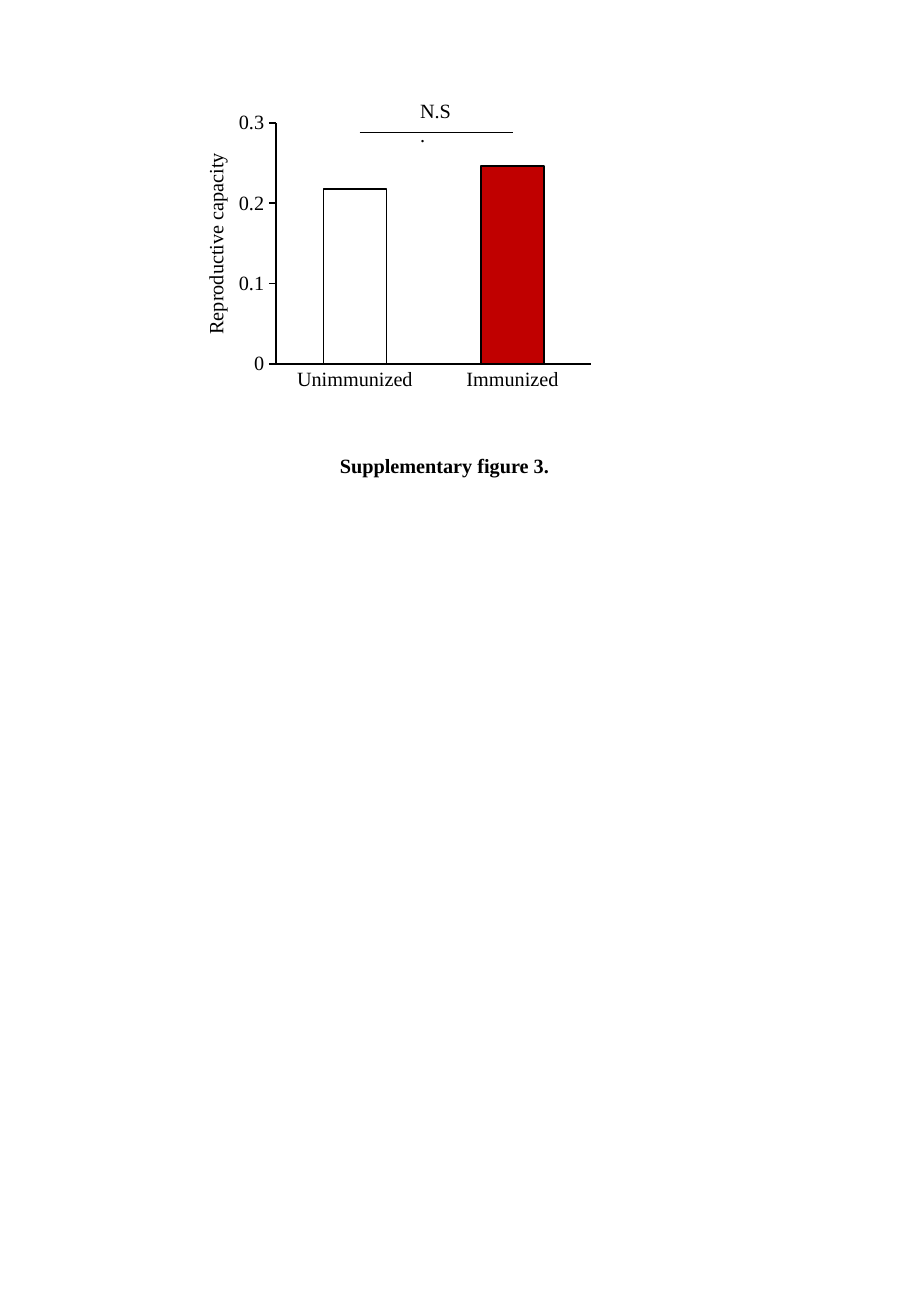
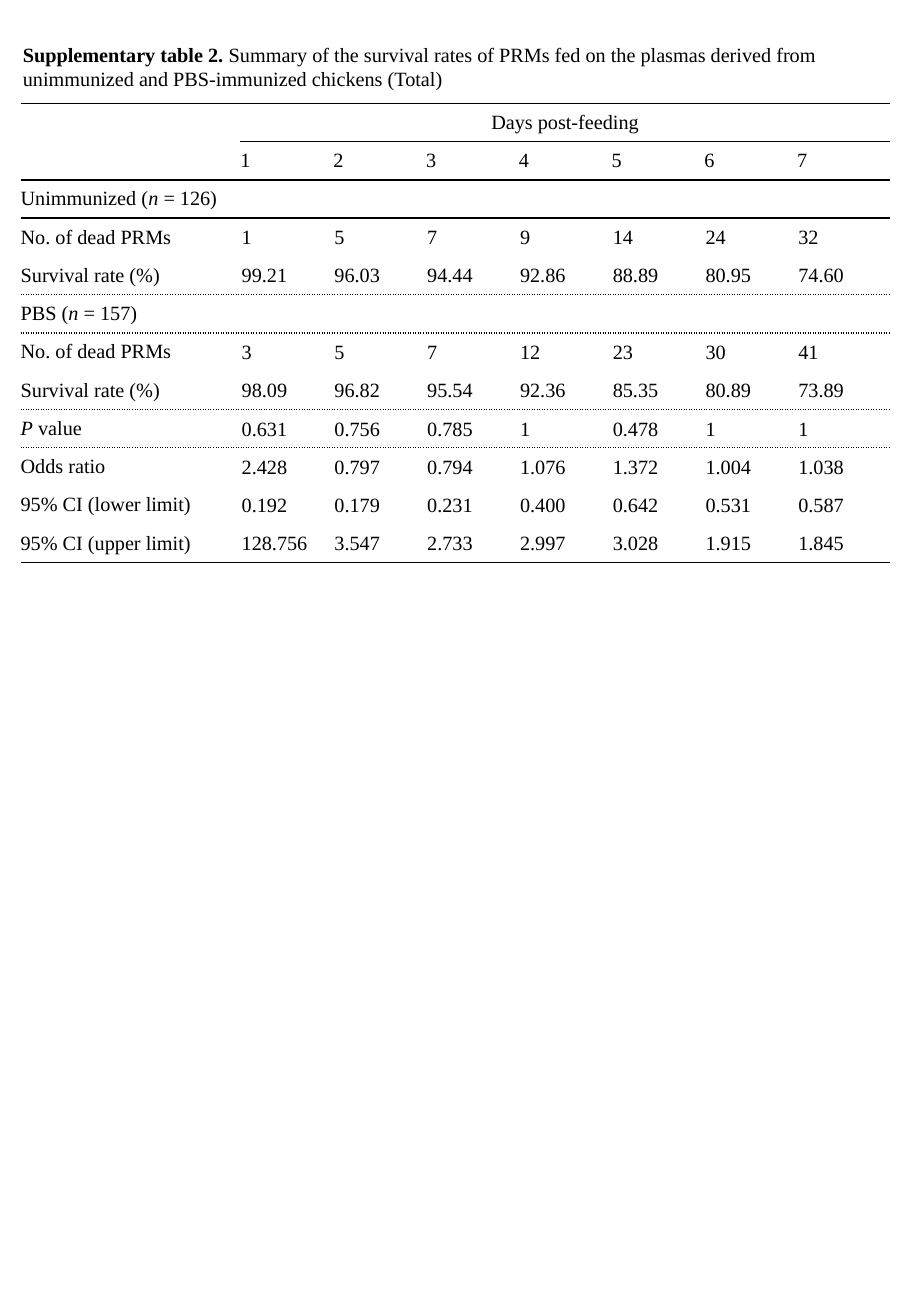
from dataclasses import dataclass

from lxml.etree import SubElement
from pptx import Presentation
from pptx.chart.data import CategoryChartData
from pptx.dml.color import RGBColor
from pptx.enum.chart import XL_CHART_TYPE, XL_TICK_MARK
from pptx.enum.shapes import MSO_CONNECTOR
from pptx.enum.text import MSO_ANCHOR, MSO_AUTO_SIZE, PP_ALIGN
from pptx.oxml import parse_xml
from pptx.oxml.ns import nsdecls, qn
from pptx.util import Inches, Pt


@dataclass(frozen=True)
class Theme:
    font: str = "Times New Roman"
    ink: RGBColor = RGBColor(0, 0, 0)
    paper: RGBColor = RGBColor(255, 255, 255)
    accent: RGBColor = RGBColor(0xC0, 0, 0)
    text_size: float = 12
    chart_size: float = 10.5
    line_width: float = 1


THEME = Theme()
PAGE_COLUMNS, PAGE_ROWS = 75, 108.3
NO_STYLE = "{2D5ABB26-0587-4C30-8999-92F81FD0307C}"

COUNT_LABEL, RATE_LABEL = "No. of dead PRMs", "Survival rate (%)"
TABLE_ROWS = [
    ["", "Days post-feeding"],
    ["", "1", "2", "3", "4", "5", "6", "7"],
    [[("Unimmunized (", {}), ("n ", {"italic": True}), ("= 126)", {})]],
    [COUNT_LABEL, "1", "5", "7", "9", "14", "24", "32"],
    [RATE_LABEL, "99.21", "96.03", "94.44", "92.86", "88.89", "80.95", "74.60"],
    [[("PBS (", {}), ("n ", {"italic": True}), ("= 157)", {})]],
    [COUNT_LABEL, "3", "5", "7", "12", "23", "30", "41"],
    [RATE_LABEL, "98.09", "96.82", "95.54", "92.36", "85.35", "80.89", "73.89"],
    [[("P", {"italic": True}), (" value", {})],
     "0.631", "0.756", "0.785", "1", "0.478", "1", "1"],
    ["Odds ratio", "2.428", "0.797", "0.794", "1.076", "1.372", "1.004", "1.038"],
    ["95% CI (lower limit)",
     "0.192", "0.179", "0.231", "0.400", "0.642", "0.531", "0.587"],
    ["95% CI (upper limit)",
     "128.756", "3.547", "2.733", "2.997", "3.028", "1.915", "1.845"],
]
HEADER_ROWS = 2
RULES = {0: ("solid", 0), 1: ("solid", 1), 2: ("solid", 0),
         5: ("dot", 0), 8: ("dot", 0), 12: ("solid", 0)}
SPANS = [((0, 1), (0, 7)), ((2, 0), (2, 1)), ((5, 0), (5, 1))]


def grid(*cells):
    return [Inches(cell / 10) for cell in cells]


def set_values(target, values):
    for name, value in values.items():
        setattr(target, name, value)


def style_font(font, **changes):
    set_values(font, {"name": THEME.font, "size": Pt(THEME.text_size),
                      "bold": False, **changes})
    font.color.rgb = THEME.ink


def style_line(line):
    line.color.rgb = THEME.ink
    line.width = Pt(THEME.line_width)


def write_spans(para, content):
    spans = [(content, {})] if isinstance(content, str) else content
    for text, changes in spans:
        if text:
            span = para.add_run()
            span.text = text
            style_font(span.font, **changes)


def add_text(page, place, content):
    box = page.shapes.add_textbox(*grid(*place))
    set_values(box.text_frame, {"word_wrap": True,
                                "auto_size": MSO_AUTO_SIZE.SHAPE_TO_FIT_TEXT})
    write_spans(box.text_frame.paragraphs[0], content)


def add_line(page, start, end):
    line = page.shapes.add_connector(MSO_CONNECTOR.STRAIGHT, *grid(*start, *end))
    style_line(line.line)
    SubElement(line.element.spPr, qn("a:effectLst"))


def set_layout(parent, **values):
    layout = parent.find(qn("c:layout"))
    if layout is None:
        layout = parse_xml(f"<c:layout {nsdecls('c')}/>")
        parent.insert(0, layout)
    manual = SubElement(layout, qn("c:manualLayout"))
    for name, value in values.items():
        SubElement(manual, qn(f"c:{name}")).set("val", str(value))


def style_axis(axis, tick):
    set_values(axis, {"has_major_gridlines": False, "major_tick_mark": tick,
                      "minor_tick_mark": XL_TICK_MARK.NONE})
    style_font(axis.tick_labels.font)
    style_line(axis.format.line)


def add_axis_title(axis, text):
    title = axis.axis_title
    write_spans(title.text_frame.paragraphs[0], text)
    for body in title.element.iter(qn("a:bodyPr")):
        body.set("rot", "-5400000")
        body.set("vert", "horz")
    set_layout(title.element, xMode="edge", yMode="edge", x=0.07, y=0.15)


def add_bar_chart(page, place, values, colors, axis_title):
    data = CategoryChartData()
    data.categories = list(values)
    data.add_series("Series 1", list(values.values()))
    chart = page.shapes.add_chart(
        XL_CHART_TYPE.COLUMN_CLUSTERED, *grid(*place), data).chart
    set_values(chart, {"has_legend": False, "has_title": False})
    style_font(chart.font, size=Pt(THEME.chart_size))
    style_axis(chart.category_axis, XL_TICK_MARK.NONE)
    style_axis(chart.value_axis, XL_TICK_MARK.OUTSIDE)
    set_values(chart.value_axis, {"minimum_scale": 0, "maximum_scale": 0.3,
                                  "major_unit": 0.1})
    add_axis_title(chart.value_axis, axis_title)
    plot = chart.plots[0]
    set_values(plot, {"gap_width": 150, "overlap": -30, "vary_by_categories": False})
    for index, color in enumerate(colors):
        bar = plot.series[0].points[index].format
        bar.fill.solid()
        bar.fill.fore_color.rgb = color
        style_line(bar.line)
    set_layout(chart.element.find(f".//{qn('c:plotArea')}"), layoutTarget="inner",
               xMode="edge", yMode="edge", x=0.244, y=0.064, w=0.717, h=0.787)


def add_border(cell, side, dash):
    width = Pt(THEME.line_width)
    cell._tc.get_or_add_tcPr().append(parse_xml(
        f'<a:{side} {nsdecls("a")} w="{width}"><a:solidFill>'
        f'<a:srgbClr val="{THEME.ink}"/></a:solidFill>'
        f'<a:prstDash val="{dash}"/></a:{side}>'))


def style_cell(cell, row, column):
    inset = Inches(0.01 if row >= HEADER_ROWS and column else 0)
    set_values(cell, {"margin_left": inset, "margin_right": inset,
                      "margin_top": inset, "margin_bottom": 0,
                      "vertical_anchor": MSO_ANCHOR.MIDDLE})
    for side, boundary in (("lnT", row), ("lnB", row + 1)):
        dash, first_column = RULES.get(boundary, ("", PAGE_COLUMNS))
        if column >= first_column:
            add_border(cell, side, dash)
    cell.fill.background()


def add_table(page, place, rows, widths):
    frame = page.shapes.add_table(len(rows), len(widths), *grid(*place))
    table = frame.table
    set_values(table, {"first_row": False, "horz_banding": False})
    for style in frame.element.iter(qn("a:tableStyleId")):
        style.text = NO_STYLE
    for column, width in zip(table.columns, grid(*widths)):
        column.width = width
    for row, contents in enumerate(rows):
        for column in range(len(widths)):
            cell = table.cell(row, column)
            style_cell(cell, row, column)
            para = cell.text_frame.paragraphs[0]
            if column < len(contents):
                write_spans(para, contents[column])
            SubElement(para._p, qn("a:endParaRPr")).set(
                "sz", str(THEME.text_size * 100))
    for first, last in SPANS:
        table.cell(*first).merge(table.cell(*last))
    table.cell(0, 1).text_frame.paragraphs[0].alignment = PP_ALIGN.CENTER


def build_figure(page):
    add_bar_chart(page, (13.9, 8.5, 36.2, 25.2),
                  {"Unimmunized": 0.218, "Immunized": 0.246},
                  (THEME.paper, THEME.accent), "Reproductive capacity")
    add_text(page, (27, 36.8, 20, 3),
             [("Supplementary figure 3.", {"bold": True})])
    add_line(page, (29.6, 10.9), (42.2, 10.9))
    add_text(page, (33.6, 7.6, 4.7, 3), "N.S.")


def build_table(page):
    add_table(page, (1.7, 8.5, 71.6, 37.8), TABLE_ROWS, [18.1] + [7.64] * 7)
    add_text(page, (0.9, 3, 74.1, 5), [
        ("Supplementary table 2. ", {"bold": True}),
        ("Summary of the survival rates of PRMs fed on the plasmas derived from "
         "unimmunized and PBS-immunized chickens (Total)", {})])


def main():
    deck = Presentation()
    deck.slide_width, deck.slide_height = grid(PAGE_COLUMNS, PAGE_ROWS)
    for build in (build_figure, build_table):
        build(deck.slides.add_slide(deck.slide_layouts[6]))
    deck.save("out.pptx")


if __name__ == "__main__":
    main()
